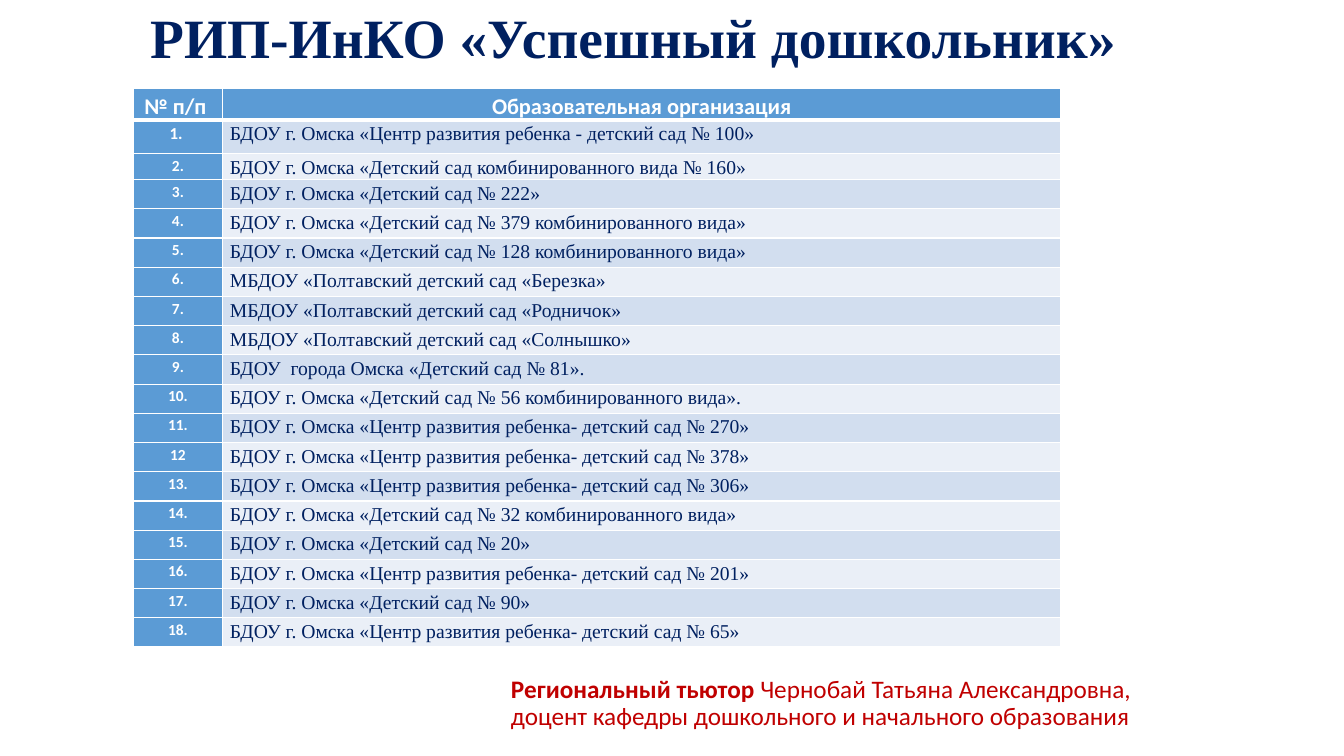
from dataclasses import dataclass

from lxml.etree import SubElement
from pptx import Presentation
from pptx.dml.color import RGBColor
from pptx.enum.text import MSO_ANCHOR, MSO_AUTO_SIZE, PP_ALIGN
from pptx.oxml.ns import qn
from pptx.util import Inches, Pt

COLORS = {
    "navy": "002060",
    "red": "C00000",
    "white": "FFFFFF",
    "blue": "5B9BD5",
    "band_dark": "D2DEEF",
    "band_light": "EAEFF7",
}
SANS, SERIF = "Calibri", "Times New Roman"
COLUMN_WIDTHS = (0.89, 8.31)
HEADER_HEIGHT = 0.29
HEADINGS = ("№ п/п ", "Образовательная организация")


@dataclass(frozen=True)
class Kindergarten:
    number: str
    name: str
    height: float = 0.29
    number_size: float = 11


KINDERGARTENS = [
    Kindergarten("1. ", "БДОУ г. Омска «Центр развития ребенка - детский сад № 100»", 0.33, 12),
    Kindergarten("2.", "БДОУ г. Омска «Детский сад комбинированного вида № 160»", 0.26),
    Kindergarten("3.", "БДОУ г. Омска «Детский сад № 222»"),
    Kindergarten("4.", "БДОУ г. Омска «Детский сад № 379 комбинированного вида»"),
    Kindergarten("5.", "БДОУ г. Омска «Детский сад № 128 комбинированного вида»"),
    Kindergarten("6.", "МБДОУ «Полтавский детский сад «Березка»"),
    Kindergarten("7.", "МБДОУ «Полтавский детский сад «Родничок»"),
    Kindergarten("8.", "МБДОУ «Полтавский детский сад «Солнышко»"),
    Kindergarten("9.", "БДОУ  города Омска «Детский сад № 81»."),
    Kindergarten("10.", "БДОУ г. Омска «Детский сад № 56 комбинированного вида»."),
    Kindergarten("11.", "БДОУ г. Омска «Центр развития ребенка- детский сад № 270»"),
    Kindergarten("12", "БДОУ г. Омска «Центр развития ребенка- детский сад № 378»"),
    Kindergarten("13.", "БДОУ г. Омска «Центр развития ребенка- детский сад № 306»"),
    Kindergarten("14.", "БДОУ г. Омска «Детский сад № 32 комбинированного вида»"),
    Kindergarten("15.", "БДОУ г. Омска «Детский сад № 20»"),
    Kindergarten("16.", "БДОУ г. Омска «Центр развития ребенка- детский сад № 201»"),
    Kindergarten("17.", "БДОУ г. Омска «Детский сад № 90»"),
    Kindergarten("18.", "БДОУ г. Омска «Центр развития ребенка- детский сад № 65»"),
]


def add_text(paragraph, text: str, *, size: float, color: str, font: str = SANS,
             bold: bool = False, align=PP_ALIGN.LEFT, line_spacing: float = 0.9) -> None:
    paragraph.alignment = align
    paragraph.line_spacing = line_spacing
    run = paragraph.add_run()
    run.text = text
    run.font.size = Pt(size)
    run.font.name = font
    run.font.bold = bold
    run.font.color.rgb = RGBColor.from_string(COLORS[color])


def set_borders(cell, *, top: float = 1, bottom: float = 1) -> None:
    properties = cell._tc.get_or_add_tcPr()
    for tag, width in (("a:lnL", 1), ("a:lnR", 1), ("a:lnT", top), ("a:lnB", bottom)):
        line = SubElement(properties, qn(tag), w=str(Pt(width)))
        fill = SubElement(line, qn("a:solidFill"))
        SubElement(fill, qn("a:srgbClr"), val=COLORS["white"])


def fill_cell(cell, text: str, *, background: str, top: float = 1,
              bottom: float = 1, **text_format) -> None:
    cell.margin_left = cell.margin_right = Inches(0.07)
    cell.margin_top = cell.margin_bottom = 0
    set_borders(cell, top=top, bottom=bottom)
    cell.fill.solid()
    cell.fill.fore_color.rgb = RGBColor.from_string(COLORS[background])
    add_text(cell.text_frame.paragraphs[0], text, line_spacing=1.15, **text_format)


def add_kindergarten_table(slide) -> None:
    heights = [HEADER_HEIGHT] + [item.height for item in KINDERGARTENS]
    table = slide.shapes.add_table(
        len(heights), len(COLUMN_WIDTHS), Inches(1.32), Inches(0.88),
        Inches(sum(COLUMN_WIDTHS)), Inches(sum(heights))).table
    for column, width in zip(table.columns, COLUMN_WIDTHS):
        column.width = Inches(width)
    for row, height in zip(table.rows, heights):
        row.height = Inches(height)

    label_format = dict(background="blue", color="white", bold=True, align=PP_ALIGN.CENTER)
    for column_index, heading in enumerate(HEADINGS):
        fill_cell(table.cell(0, column_index), heading, size=16, bottom=3, **label_format)
    for row_index, item in enumerate(KINDERGARTENS, start=1):
        top = 3 if row_index == 1 else 1
        band = "band_dark" if row_index % 2 else "band_light"
        fill_cell(table.cell(row_index, 0), item.number, size=item.number_size,
                  top=top, **label_format)
        fill_cell(table.cell(row_index, 1), item.name, size=14, top=top,
                  background=band, color="navy", font=SERIF)


def add_title(slide) -> None:
    title = slide.shapes.title
    title.left, title.top = Inches(0.89), Inches(0)
    title.width, title.height = Inches(10.78), Inches(0.81)
    frame = title.text_frame
    frame.auto_size = MSO_AUTO_SIZE.NONE
    frame.vertical_anchor = MSO_ANCHOR.MIDDLE
    add_text(frame.paragraphs[0], "РИП-ИнКО «Успешный дошкольник»", size=39.6,
             color="navy", font=SERIF, bold=True, align=PP_ALIGN.CENTER)


def add_tutor(slide) -> None:
    tutor = slide.shapes.add_textbox(Inches(4.97), Inches(6.66), Inches(6.56), Inches(0.49))
    tutor.text_frame.word_wrap = True
    paragraph = tutor.text_frame.paragraphs[0]
    add_text(paragraph, "Региональный тьютор ", size=18, color="red", bold=True)
    add_text(paragraph, "Чернобай Татьяна Александровна, доцент кафедры "
             "дошкольного и начального образования", size=18, color="red")


def main() -> None:
    presentation = Presentation()
    presentation.slide_width = Inches(13.33)
    presentation.slide_height = Inches(7.5)
    slide = presentation.slides.add_slide(presentation.slide_layouts.get_by_name("Title Only"))

    # Table of organisations
    add_kindergarten_table(slide)
    # Tutor line below the table
    add_tutor(slide)
    # Heading
    add_title(slide)

    presentation.save("out.pptx")


if __name__ == "__main__":
    main()
